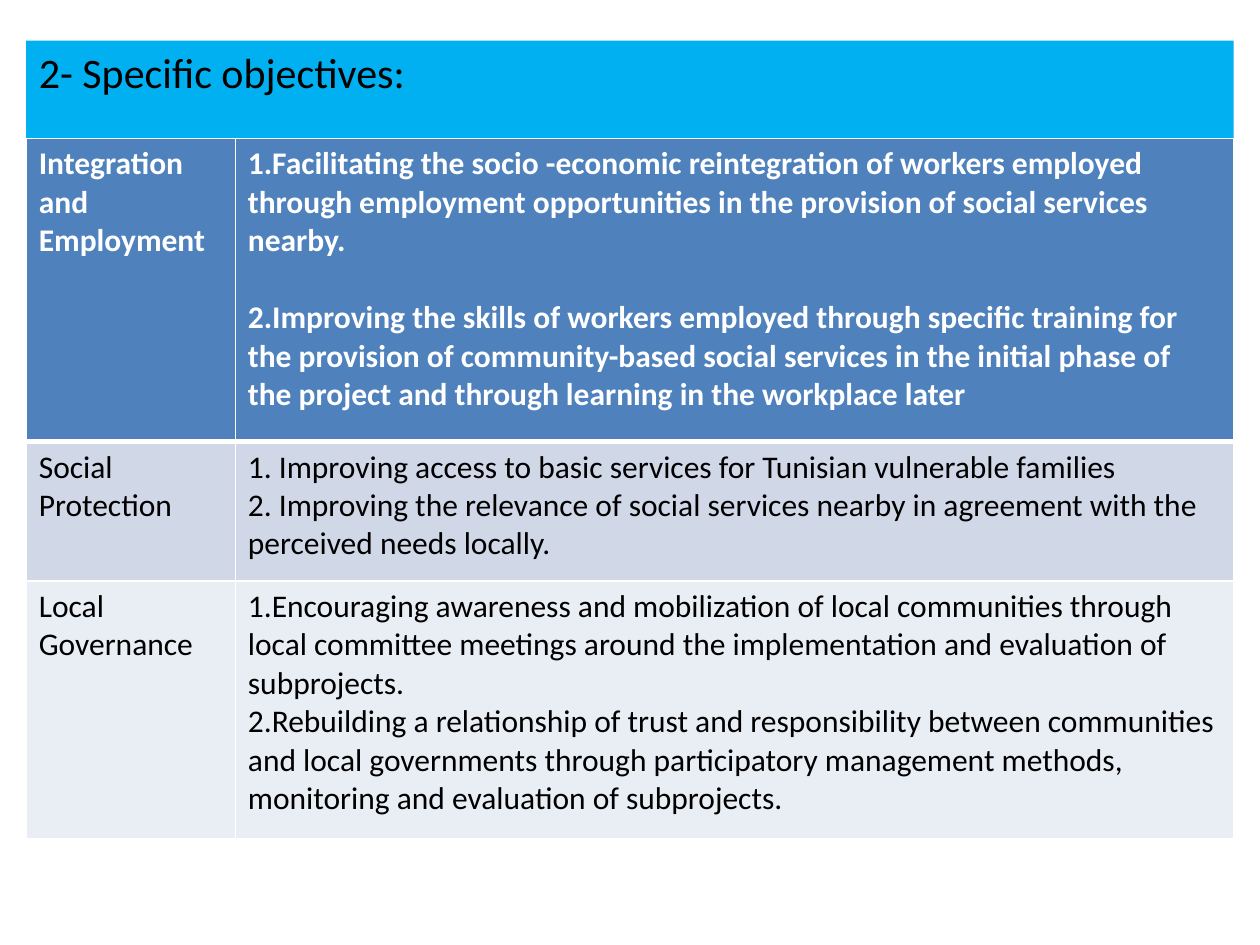
from dataclasses import dataclass

from lxml import etree
from pptx import Presentation
from pptx.dml.color import RGBColor
from pptx.enum.text import MSO_ANCHOR, MSO_AUTO_SIZE, PP_ALIGN
from pptx.oxml.ns import qn
from pptx.util import Pt

LEFT = PP_ALIGN.LEFT
TOP = MSO_ANCHOR.TOP
GROW = MSO_AUTO_SIZE.SHAPE_TO_FIT_TEXT
TITLE_ONLY = 5


@dataclass(frozen=True)
class Theme:
    font: str = "Calibri"
    title_size: float = 24
    body_size: float = 18
    ink: str = "000000"
    paper: str = "FFFFFF"
    banner: str = "00B0F0"
    row_fills: tuple = ("4F81BD", "D0D8E8", "E9EDF4")
    rule: float = 1
    header_rule: float = 3


THEME = Theme()

OBJECTIVES = [
    ("Integration and Employment", [
        "Facilitating the socio -economic reintegration of workers employed through "
        "employment opportunities in the provision of social services nearby.",
        "Improving the skills of workers employed through specific training for the "
        "provision of community-based social services in the initial phase of the "
        "project and through learning in the workplace later",
    ]),
    ("Social Protection", [
        " Improving access to basic services for Tunisian vulnerable families",
        " Improving the relevance of social services nearby in agreement with the "
        "perceived needs locally.",
    ]),
    ("Local Governance", [
        "Encouraging awareness and mobilization of local communities through local "
        "committee meetings around the implementation and evaluation of subprojects.",
        "Rebuilding a relationship of trust and responsibility between communities and "
        "local governments through participatory management methods, monitoring and "
        "evaluation of subprojects.",
    ]),
]


def write(frame, lines, *, size, color, bold=False, numbered=False, gap=0):
    for index, line in enumerate(lines):
        paragraph = frame.add_paragraph() if index else frame.paragraphs[0]
        paragraph.alignment = LEFT
        paragraph.space_before = Pt(gap if index else 0)
        if numbered:
            properties = paragraph._p.get_or_add_pPr()
            properties.set("marL", "0")
            properties.set("indent", "0")
            numbering = etree.SubElement(properties, qn("a:buAutoNum"))
            numbering.set("type", "arabicPeriod")
        run = paragraph.add_run()
        run.text = line
        run.font.name = THEME.font
        run.font.size = Pt(size)
        run.font.bold = bold
        run.font.color.rgb = RGBColor.from_string(color)


def add_borders(cell, **widths):
    properties = cell._tc.get_or_add_tcPr()
    for side in "LRTB":
        border = etree.SubElement(properties, qn(f"a:ln{side}"))
        border.set("w", str(Pt(widths.get(side, THEME.rule))))
        fill = etree.SubElement(border, qn("a:solidFill"))
        etree.SubElement(fill, qn("a:srgbClr")).set("val", THEME.paper)


def place_banner(slide, left, top, width, height, text):
    banner = slide.shapes.title
    banner.left, banner.top = Pt(left), Pt(top)
    banner.width, banner.height = Pt(width), Pt(height)
    banner.fill.solid()
    banner.fill.fore_color.rgb = RGBColor.from_string(THEME.banner)
    frame = banner.text_frame
    frame.word_wrap = True
    frame.auto_size = GROW
    frame.vertical_anchor = TOP
    write(frame, [text], size=THEME.title_size, color=THEME.ink)


def place_objectives(slide, left, top, width, row_heights, area_width):
    table = slide.shapes.add_table(
        len(OBJECTIVES), 2, Pt(left), Pt(top), Pt(width), Pt(sum(row_heights))
    ).table
    table.columns[0].width = Pt(area_width)
    table.columns[1].width = Pt(width - area_width)
    for index, (area, goals) in enumerate(OBJECTIVES):
        table.rows[index].height = Pt(row_heights[index])
        header = index == 0
        rules = [{"B": THEME.header_rule}, {"T": THEME.header_rule}, {}][index]
        style = {
            "size": THEME.body_size,
            "color": THEME.paper if header else THEME.ink,
            "bold": header,
        }
        area_cell, goals_cell = table.rows[index].cells
        for cell in (area_cell, goals_cell):
            add_borders(cell, **rules)
            cell.fill.solid()
            cell.fill.fore_color.rgb = RGBColor.from_string(THEME.row_fills[index])
        write(area_cell.text_frame, [area], **style)
        write(goals_cell.text_frame, goals, numbered=True,
              gap=THEME.body_size * 1.22 if header else 0, **style)


def main():
    deck = Presentation()
    deck.slide_width, deck.slide_height = Pt(720), Pt(540)
    slide = deck.slides.add_slide(deck.slide_layouts[TITLE_ONLY])
    margin = 15
    width = 720 - 2 * margin
    place_banner(slide, margin, 23.2, width, 36.3, "2- Specific objectives:")
    place_objectives(slide, margin, 79.2, width, (173.2, 79.6, 147.4), 119.5)
    deck.save("out.pptx")


if __name__ == "__main__":
    main()
